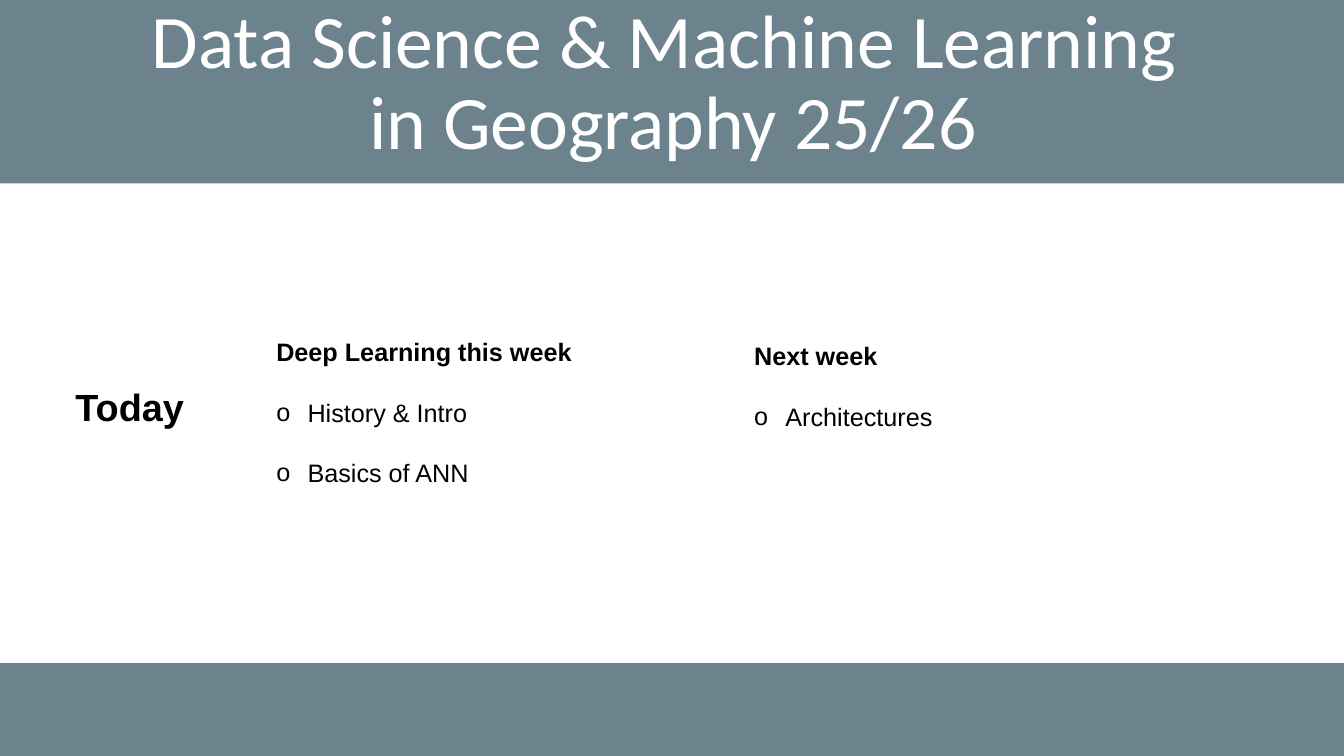
from lxml import etree
from pptx import Presentation
from pptx.dml.color import RGBColor
from pptx.enum.shapes import MSO_SHAPE
from pptx.enum.text import MSO_ANCHOR, MSO_AUTO_SIZE, PP_ALIGN
from pptx.oxml.ns import qn
from pptx.util import Inches, Pt

RECT = MSO_SHAPE.RECTANGLE
TOP, BOTTOM = MSO_ANCHOR.TOP, MSO_ANCHOR.BOTTOM
NO_FIT = MSO_AUTO_SIZE.NONE
LEFT, CENTER = PP_ALIGN.LEFT, PP_ALIGN.CENTER


def rgb(color):
    return RGBColor.from_string(color)


def format_text(p, size, font, color, bold=False):
    for r in p.runs:
        r.font.size = Pt(size)
        r.font.name = font
        r.font.bold = bold
        r.font.color.rgb = rgb(color)


prs = Presentation()
prs.slide_width, prs.slide_height = Inches(13.33), Inches(7.5)
s = prs.slides.add_slide(prs.slide_layouts[3])  # title and two lists

# Translucent bands at the bottom and top
for left, top, height in [(-0.5, 6.58, 1.56), (-0.59, -0.13, 1.95)]:
    band = s.shapes.add_shape(RECT, Inches(left), Inches(top), Inches(14.45), Inches(height))
    band.shadow.inherit = False
    band.line.fill.background()
    band.fill.solid()
    band.fill.fore_color.rgb = rgb("0B3041")
    color = band.fill._xPr.find(".//" + qn("a:srgbClr"))
    etree.SubElement(color, qn("a:alpha"), val="60000")

# Title, brought in front of the bands
title = s.shapes.title
s.shapes._spTree.append(title._element)
title.left, title.top = Inches(0.17), Inches(0.14)
title.width, title.height = Inches(13.01), Inches(1.56)
tf = title.text_frame
tf.text = "Data Science & Machine Learning \vin Geography 25/26"
tf.vertical_anchor = BOTTOM
tf.auto_size = NO_FIT
p = tf.paragraphs[0]
p.alignment = CENTER
p.line_spacing = 0.9
format_text(p, 54, "Calibri", "FFFFFF")

# Weekly lists: a bold heading, then bulleted topics
weeks = [
    (1, 2.64, 2.99, 2.22, ["Deep Learning this week", "History & Intro", "Basics of ANN"]),
    (2, 7.38, 3.03, 1.62, ["Next week", "Architectures"]),
]
for idx, left, top, height, lines in weeks:
    sp = s.placeholders[idx]
    sp.left, sp.top = Inches(left), Inches(top)
    sp.width, sp.height = Inches(6.08), Inches(height)
    tf = sp.text_frame
    tf.text = "\n".join(lines)
    tf.vertical_anchor = TOP
    tf.auto_size = NO_FIT
    for i, p in enumerate(tf.paragraphs):
        p.alignment = LEFT
        p.line_spacing = 2.0
        p.space_before = Pt(0)
        format_text(p, 18, "Arial", "000000", bold=i == 0)
        pPr = p._p.get_or_add_pPr()
        indent = Inches(0.31) if i else 0
        pPr.set("marL", str(indent))
        pPr.set("indent", str(-indent))
        if i:
            bullet_color = etree.SubElement(pPr, qn("a:buClr"))
            etree.SubElement(bullet_color, qn("a:srgbClr"), val="000000")
            etree.SubElement(pPr, qn("a:buFont"), typeface="Arial")
            etree.SubElement(pPr, qn("a:buChar"), char="o")
        else:
            etree.SubElement(pPr, qn("a:buNone"))

# Label beside the lists
label = s.shapes.add_textbox(Inches(0.65), Inches(3.76), Inches(1.34), Inches(0.56))
tf = label.text_frame
tf.word_wrap = True
tf.text = "Today"
format_text(tf.paragraphs[0], 27, "Arial", "000000", bold=True)

prs.save("out.pptx")
